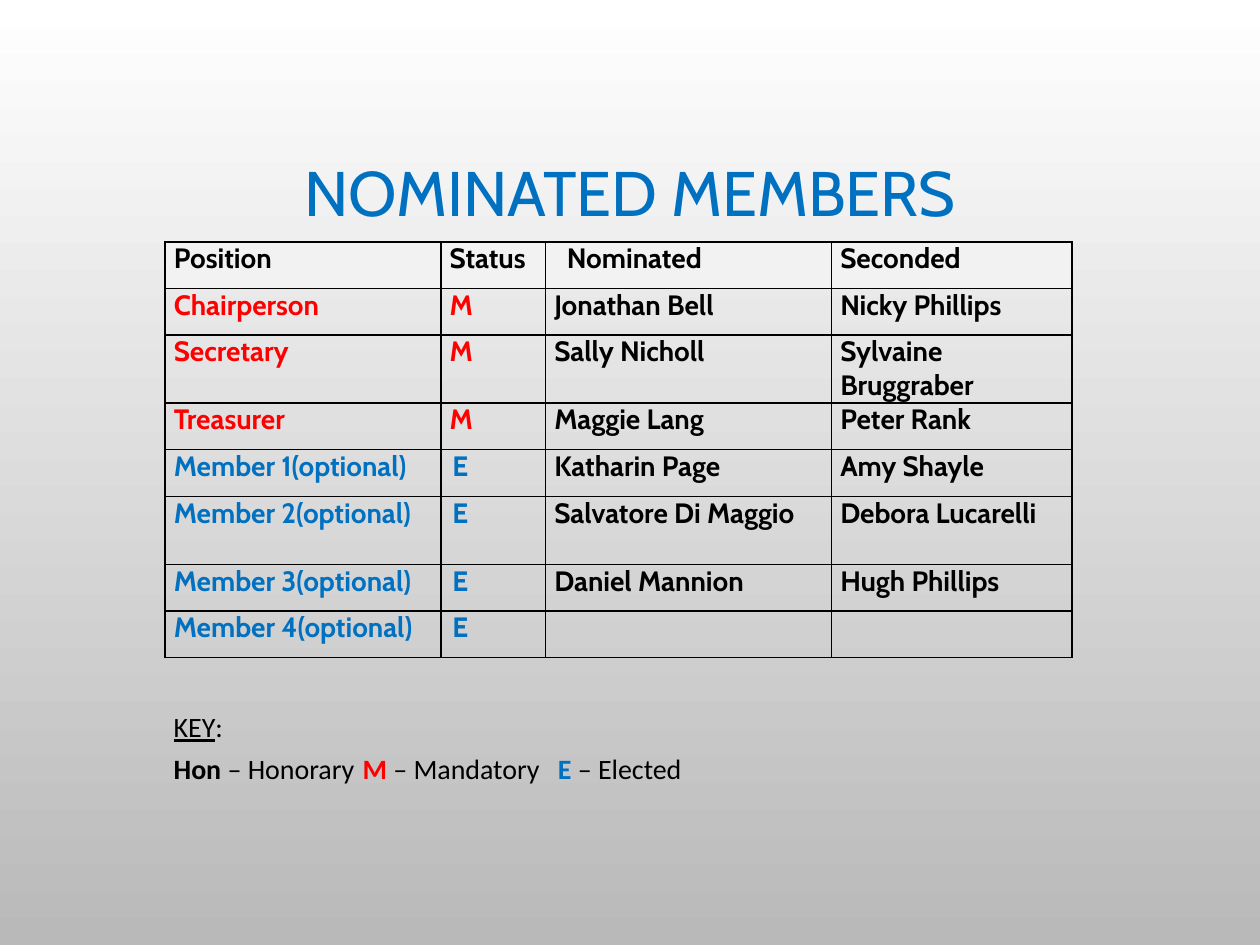
import pptx
import pptx.dml.color
import pptx.enum.text
import pptx.oxml
import pptx.oxml.ns
import pptx.util

COLORS = {
    "black": "000000",
    "mandatory": "FF0000",
    "elected": "0070C0",
    "header": "F2F2F2",
    "top": "FFFFFF",
    "bottom": "B9B9B9",
}
COLUMN_WIDTHS = [2.19, 0.83, 2.27, 1.91]
ROW_HEIGHT, TALL_ROW_HEIGHT = 0.37, 0.54
TALL_ROWS = (2, 5)
HEADINGS = ["Position", "Status", "Nominated", "Seconded"]
MEMBERS = [
    ("Chairperson", "M", "Jonathan Bell", "Nicky Phillips"),
    ("Secretary", "M", "Sally Nicholl", "Sylvaine Bruggraber"),
    ("Treasurer", "M", "Maggie Lang", "Peter Rank"),
    ("Member 1(optional)", "E", "Katharin Page", "Amy Shayle"),
    ("Member 2(optional)", "E", "Salvatore Di Maggio", "Debora Lucarelli"),
    ("Member 3(optional)", "E", "Daniel Mannion", "Hugh Phillips"),
    ("Member 4(optional)", "E", "", ""),
]
STATUS_COLORS = {"M": "mandatory", "E": "elected"}
NAMESPACE = pptx.oxml.ns.nsdecls("a")


def rgb(name):
    """Return the named colour."""
    return pptx.dml.color.RGBColor.from_string(COLORS[name])


def style_font(font, face, size, color, bold=False):
    """Set the face, size, colour and weight of a font."""
    font.name = face
    font.size = pptx.util.Pt(size)
    font.color.rgb = rgb(color)
    font.bold = bold


def paint_background(page):
    """Fill the page with a vertical gradient."""
    fill = page.background.fill
    fill.gradient()
    fill.gradient_angle = 270
    for stop, name in zip(fill.gradient_stops, ("top", "bottom")):
        stop.color.rgb = rgb(name)


def add_title(page, text):
    """Place and format the title placeholder."""
    title = page.shapes.title
    title.left, title.top, title.width, title.height = map(
        pptx.util.Inches, (0.75, 0.68, 8.5, 1.75))
    frame = title.text_frame
    frame.text = text
    frame.vertical_anchor = pptx.enum.text.MSO_ANCHOR.MIDDLE
    para = frame.paragraphs[0]
    para.alignment = pptx.enum.text.PP_ALIGN.CENTER
    para.line_spacing = 0.9
    style_font(para.font, "Cabin", 36, "elected")


def add_borders(cell):
    """Draw a thin black line on each side of a cell."""
    properties = cell._tc.get_or_add_tcPr()
    for side in "LRTB":
        properties.append(pptx.oxml.parse_xml(
            f'<a:ln{side} {NAMESPACE} w="12700"><a:solidFill>'
            f'<a:srgbClr val="{COLORS["black"]}"/></a:solidFill></a:ln{side}>'))


def fill_cell(cell, text, color, header=False, indent=0):
    """Write and format one table cell."""
    cell.margin_left = cell.margin_right = pptx.util.Inches(0.07)
    cell.margin_top = cell.margin_bottom = 0
    add_borders(cell)
    if header:
        cell.fill.solid()
        cell.fill.fore_color.rgb = rgb("header")
    else:
        cell.fill.background()
    cell.text = text
    para = cell.text_frame.paragraphs[0]
    if indent:
        para._p.get_or_add_pPr().set("marL", str(pptx.util.Inches(indent)))
    style_font(para.font, "Cabin", 16, color, bold=True)


def add_members_table(page):
    """Add the table of positions and nominated members."""
    heights = [TALL_ROW_HEIGHT if row in TALL_ROWS else ROW_HEIGHT
               for row in range(len(MEMBERS) + 1)]
    table = page.shapes.add_table(
        len(heights), len(COLUMN_WIDTHS), *map(
            pptx.util.Inches,
            (1.31, 1.92, sum(COLUMN_WIDTHS), sum(heights)))).table
    table.horz_banding = False
    for column, width in zip(table.columns, COLUMN_WIDTHS):
        column.width = pptx.util.Inches(width)
    for row, height in zip(table.rows, heights):
        row.height = pptx.util.Inches(height)
    for index, heading in enumerate(HEADINGS):
        fill_cell(table.cell(0, index), heading, "black", header=True,
                  indent=0.1 if heading == "Nominated" else 0)
    for row, member in enumerate(MEMBERS, start=1):
        for index, text in enumerate(member):
            color = STATUS_COLORS[member[1]] if index < 2 else "black"
            fill_cell(table.cell(row, index), text, color,
                      indent=0.02 if text == "E" else 0)


def add_spans(para, spans):
    """Add runs of text, each with its colour and weight."""
    for text, color, bold in spans:
        span = para.add_run()
        span.text = text
        style_font(span.font, "Calibri", 16, color, bold)


def add_tab_stops(para, stops):
    """Set left tab stops, given in inches."""
    tabs = "".join(f'<a:tab pos="{pptx.util.Inches(stop)}" algn="l"/>'
                   for stop in stops)
    para._p.get_or_add_pPr().append(
        pptx.oxml.parse_xml(f"<a:tabLst {NAMESPACE}>{tabs}</a:tabLst>"))


def add_key(page):
    """Add the key to the status letters."""
    box = page.shapes.add_textbox(
        *map(pptx.util.Inches, (1.28, 5.58, 5.48, 0.71)))
    frame = box.text_frame
    frame.word_wrap = True
    heading = frame.paragraphs[0]
    add_spans(heading, [("KEY", "black", False), (":", "black", False)])
    heading.runs[0].font.underline = True
    legend = frame.add_paragraph()
    legend.space_before = pptx.util.Pt(5)
    add_tab_stops(legend, (1.5, 3))
    add_spans(legend, [
        ("Hon ", "black", True),
        ("– Honorary\t", "black", False),
        ("M", "mandatory", True),
        (" – Mandatory\t", "black", False),
        (" E ", "elected", True),
        ("– Elected", "black", False),
    ])


def main():
    """Build the slide and save it."""
    deck = pptx.Presentation()
    deck.slide_width = pptx.util.Inches(10)
    deck.slide_height = pptx.util.Inches(7.5)
    page = deck.slides.add_slide(deck.slide_layouts.get_by_name("Title Only"))
    paint_background(page)
    add_title(page, "NOMINATED MEMBERS")
    add_key(page)
    add_members_table(page)
    deck.save("out.pptx")


if __name__ == "__main__":
    main()
